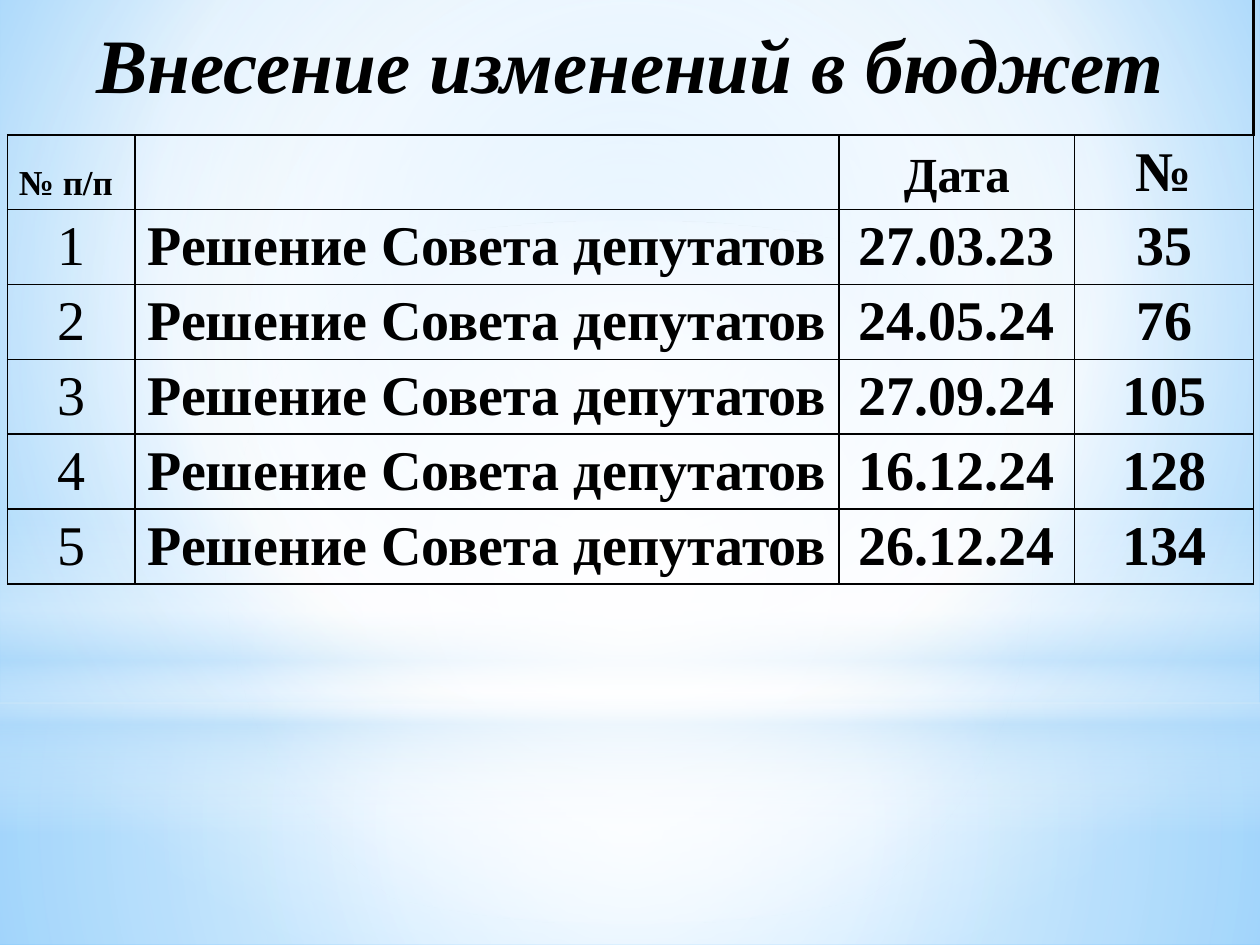
from dataclasses import dataclass

from lxml import etree
from pptx import Presentation
from pptx import util as u
from pptx.dml.color import RGBColor
from pptx.enum import shapes, text
from pptx.oxml.ns import qn


@dataclass(frozen=True)
class Theme:
    font: str = "Times New Roman"
    ink: str = "000000"
    white: str = "FFFFFF"
    haze: str = "B4DCFA"
    sky: str = "9ED5FF"
    deep_sky: str = "5BB9FF"
    title_size: int = 44
    body_size: int = 32
    date_head_size: int = 28
    number_head_size: int = 20
    thin: float = 1
    thick: float = 2.25


THEME = Theme()
CENTER = (50, 50, 50, 50)
COLUMNS = (1.01, 5.59, 1.87, 1.42)
TITLE_HEIGHT, ROW_HEIGHT = 1.07, 0.59
HEADINGS = (("№ п/п", THEME.number_head_size), ("", THEME.body_size),
            ("Дата", THEME.date_head_size), ("№", THEME.body_size))
DECISION = "Решение Совета депутатов"
DECISIONS = (("27.03.23", "35"), ("24.05.24", "76"), ("27.09.24", "105"),
             ("16.12.24", "128"), ("26.12.24", "134"))


def add_color(parent, color, opacity=100):
    tone = etree.SubElement(parent, qn("a:srgbClr"), val=color)
    if opacity < 100:
        etree.SubElement(tone, qn("a:alpha"), val=str(opacity * 1000))


def set_gradient(fill, owner, stops, focus=None):
    """Radial around focus (left, top, right, bottom), else top to bottom."""
    fill.gradient()
    gradient = owner.find(".//" + qn("a:gradFill"))
    for child in list(gradient):
        gradient.remove(child)
    stop_list = etree.SubElement(gradient, qn("a:gsLst"))
    for position, *tone in stops:
        stop = etree.SubElement(stop_list, qn("a:gs"), pos=str(position * 1000))
        add_color(stop, *tone)
    if focus:
        circle = etree.SubElement(gradient, qn("a:path"), path="circle")
        sides = {side: str(share * 1000) for side, share in zip("ltrb", focus)}
        etree.SubElement(circle, qn("a:fillToRect"), **sides)
    else:
        etree.SubElement(gradient, qn("a:lin"), ang="5400000", scaled="0")


def add_glow(slide, kind, top, height, stops, focus=CENTER):
    glow = slide.shapes.add_shape(kind, 0, u.Inches(top), u.Inches(10), u.Inches(height))
    glow.shadow.inherit = False
    glow.line.fill.background()
    set_gradient(glow.fill, glow.element, stops, focus)


def set_borders(cell, **widths):
    """Draw each side (L, R, T, B) in its width; a width of 0 hides it."""
    properties = cell._tc.get_or_add_tcPr()
    for side in "LRTB":
        width = widths.get(side, THEME.thin)
        line = etree.SubElement(properties, qn("a:ln" + side), w=str(u.Pt(width)))
        if width:
            add_color(etree.SubElement(line, qn("a:solidFill")), THEME.ink)
        else:
            etree.SubElement(line, qn("a:noFill"))
    cell.fill.background()


def write(cell, words, size=THEME.body_size, bold=True, italic=False,
          align=text.PP_ALIGN.CENTER, anchor=text.MSO_ANCHOR.BOTTOM):
    cell.margin_left = cell.margin_right = u.Inches(0.09)
    cell.margin_top = cell.margin_bottom = u.Inches(0.05)
    cell.vertical_anchor = anchor
    paragraph = cell.text_frame.paragraphs[0]
    paragraph.text = words
    paragraph.alignment = align
    font = paragraph.font
    if paragraph.runs:
        font = paragraph.runs[0].font
    font.name, font.size = THEME.font, u.Pt(size)
    font.bold, font.italic = bold, italic
    font.color.rgb = RGBColor.from_string(THEME.ink)


def add_backdrop(slide):
    white, haze = THEME.white, THEME.haze
    box, oval = shapes.MSO_SHAPE.RECTANGLE, shapes.MSO_SHAPE.OVAL
    set_gradient(slide.background.fill, slide.element,
                 [(0, THEME.sky), (60, white), (100, THEME.deep_sky)], (20, 10, 20, 60))
    # Floor and wall
    add_glow(slide, box, 5.58, 1.92, [(0, white, 91), (37, white, 76), (100, haze, 79)])
    add_glow(slide, box, 0, 5.58, [(0, white, 89), (48, white, 62), (100, haze, 79)])
    # Horizon bands
    add_glow(slide, box, 4.12, 2.5,
             [(0, white, 0), (29, white, 30), (45, haze, 40),
              (55, white, 26), (65, haze, 60), (100, white, 0)], focus=None)
    # Central light
    add_glow(slide, oval, 1.75, 5.58, [(0, white), (56, white, 0)])


def add_decisions(slide):
    row_count = len(DECISIONS) + 2
    table = slide.shapes.add_table(
        row_count, len(COLUMNS), u.Inches(0.06), 0, u.Inches(sum(COLUMNS)),
        u.Inches(TITLE_HEIGHT + ROW_HEIGHT * (row_count - 1))).table
    table.first_row = table.horz_banding = False
    for column, width in zip(table.columns, COLUMNS):
        column.width = u.Inches(width)
    for index, row in enumerate(table.rows):
        row.height = u.Inches(ROW_HEIGHT if index else TITLE_HEIGHT)
        for cell in row.cells:
            if index:
                set_borders(cell)
            else:
                set_borders(cell, L=0, T=0, R=THEME.thick)

    # Title row
    title = table.cell(0, 0)
    title.merge(table.cell(0, len(COLUMNS) - 1))
    write(title, "Внесение изменений в бюджет", THEME.title_size, italic=True,
          anchor=text.MSO_ANCHOR.MIDDLE)

    # Column headings
    for column, (heading, size) in enumerate(HEADINGS):
        align = text.PP_ALIGN.CENTER if column else text.PP_ALIGN.LEFT
        write(table.cell(1, column), heading, size, align=align)

    # Numbered decisions
    for order, (date, number) in enumerate(DECISIONS, 1):
        for column, words in enumerate((str(order), DECISION, date, number)):
            write(table.cell(order + 1, column), words, bold=column > 0)


def main():
    deck = Presentation()
    deck.slide_width, deck.slide_height = u.Inches(10), u.Inches(7.5)
    slide = deck.slides.add_slide(deck.slide_layouts[6])
    add_backdrop(slide)
    add_decisions(slide)
    deck.save("out.pptx")


if __name__ == "__main__":
    main()
